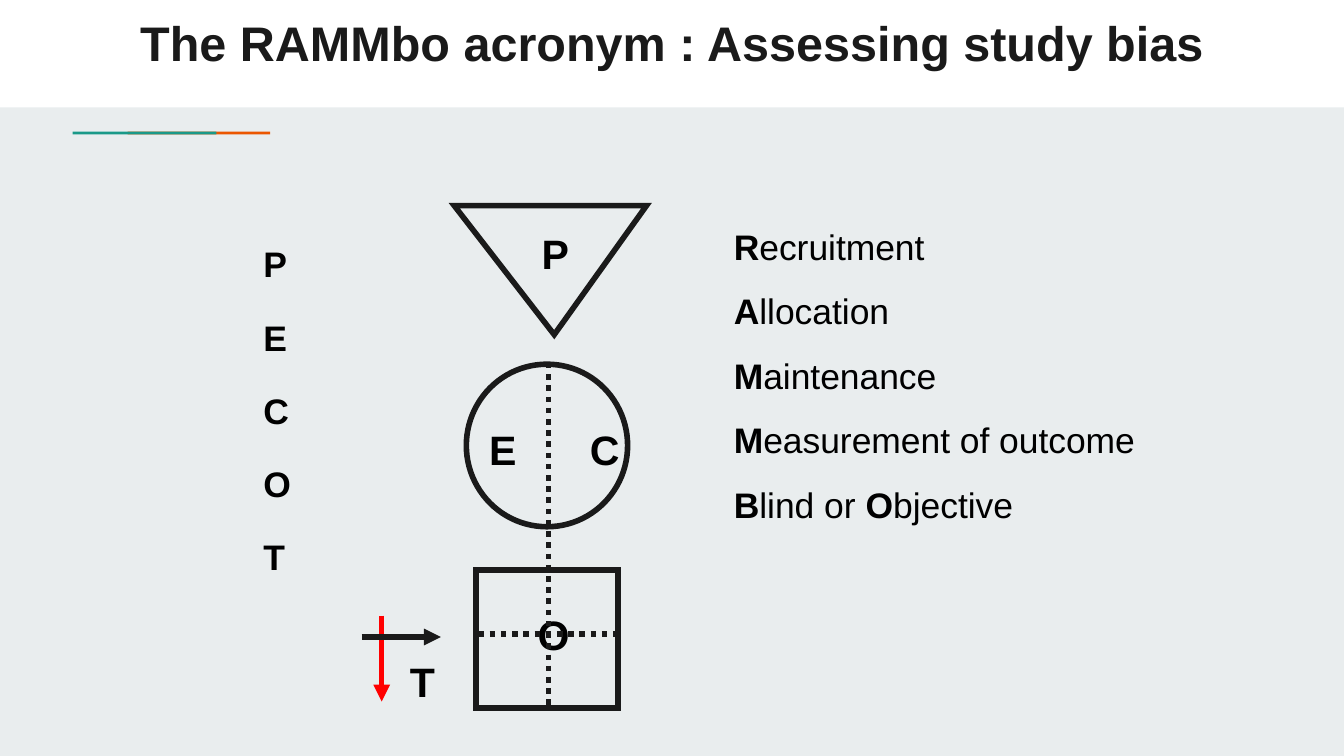
from dataclasses import dataclass

from lxml.etree import SubElement
from pptx import Presentation
from pptx.dml.color import RGBColor
from pptx.enum.dml import MSO_LINE
from pptx.enum.shapes import MSO_CONNECTOR, MSO_SHAPE
from pptx.enum.text import MSO_ANCHOR, MSO_AUTO_SIZE, PP_ALIGN
from pptx.oxml.ns import qn
from pptx.util import Inches, Pt


@dataclass(frozen=True)
class Theme:
    font: str = "Arial"
    back: str = "E9EDEE"
    band: str = "FFFFFF"
    ink: str = "1A1A1A"
    text: str = "000000"
    teal: str = "1A9988"
    orange: str = "EB5600"
    red: str = "FF0000"
    title: int = 26
    label: int = 22
    body: int = 19
    line: int = 3


THEME = Theme()


def color(code):
    return RGBColor.from_string(code)


def add_run(para, text, size, code=THEME.text, bold=True):
    run = para.add_run()
    run.text = text
    font = run.font
    font.name, font.size, font.bold = THEME.font, Pt(size), bold
    font.color.rgb = color(code)


def set_frame(frame, side, edge, anchor):
    frame.word_wrap = True
    frame.auto_size = MSO_AUTO_SIZE.NONE
    frame.vertical_anchor = anchor
    frame.margin_left = frame.margin_right = Inches(side)
    frame.margin_top = frame.margin_bottom = Inches(edge)


def add_text(slide, box, anchor=MSO_ANCHOR.TOP):
    frame = slide.shapes.add_textbox(*map(Inches, box)).text_frame
    set_frame(frame, 0.08, 0.04, anchor)
    return frame


def add_label(slide, letter, left, top):
    frame = add_text(slide, (left, top, 0.38, 0.56), MSO_ANCHOR.MIDDLE)
    add_run(frame.paragraphs[0], letter, THEME.label)


def add_bar(slide, box, code):
    bar = slide.shapes.add_shape(MSO_SHAPE.RECTANGLE, *map(Inches, box))
    bar.shadow.inherit = False
    bar.fill.solid()
    bar.fill.fore_color.rgb = color(code)
    bar.line.fill.background()


def add_outline(slide, kind, box):
    shape = slide.shapes.add_shape(kind, *map(Inches, box))
    shape.shadow.inherit = False
    shape.fill.background()
    shape.line.color.rgb = color(THEME.ink)
    shape.line.width = Pt(THEME.line)
    edge = shape._element.spPr.get_or_add_ln()
    SubElement(edge, qn("a:miter"), lim="800000")
    return shape


def add_line(slide, start, end, code=THEME.ink, dotted=False, arrow=False):
    line = slide.shapes.add_connector(
        MSO_CONNECTOR.STRAIGHT, *map(Inches, start + end))
    line.line.color.rgb = color(code)
    line.line.width = Pt(THEME.line)
    props = line._element.spPr
    if dotted:
        line.line.dash_style = MSO_LINE.ROUND_DOT
    if arrow:
        SubElement(props.get_or_add_ln(), qn("a:tailEnd"), type="triangle")
    SubElement(props, qn("a:effectLst"))


def add_header(slide, width, height):
    add_bar(slide, (0, 0, width, height), THEME.band)
    add_bar(slide, (0.95, height + 0.18, 1.06, 0.02), THEME.orange)
    add_bar(slide, (0.54, height + 0.18, 1.07, 0.02), THEME.teal)
    title = slide.shapes.title
    title.left, title.top, title.width, title.height = map(
        Inches, (0.8, 0, 8.41, 0.9))
    # Bring the title in front of its band.
    slide.shapes._spTree.append(title._element)
    set_frame(title.text_frame, 0.1, 0.1, MSO_ANCHOR.TOP)
    para = title.text_frame.paragraphs[0]
    para.alignment = PP_ALIGN.CENTER
    add_run(para, "The RAMMbo acronym : Assessing study bias",
            THEME.title, THEME.ink)
    para.add_line_break()


def add_list(slide, box, rows, spacing, indent=0):
    """Each row alternates bold and plain pieces, starting with bold."""
    frame = add_text(slide, box)
    for i, row in enumerate(rows):
        para = frame.add_paragraph() if i else frame.paragraphs[0]
        para.line_spacing = spacing
        para.space_before = Pt(THEME.body / 2)
        if indent:
            props = para._p.get_or_add_pPr()
            props.set("marL", str(Inches(indent)))
            props.set("indent", str(-Inches(indent)))
        for j, piece in enumerate(row):
            add_run(para, piece, THEME.body, bold=j % 2 == 0)


def add_figure(slide, left, top):
    """Triangle, circle and square, with the time arrows at lower left."""
    for letter, x, y in (("P", 1.26, 0.07), ("E", 0.87, 1.53),
                         ("C", 1.62, 1.53), ("O", 1.23, 2.91),
                         ("T", 0.28, 3.26)):
        add_label(slide, letter, left + x, top + y)

    add_line(slide, (left + 0.15, top + 3.05), (left + 0.15, top + 3.69),
             THEME.red, arrow=True)
    add_outline(slide, MSO_SHAPE.OVAL, (left + 0.78, top + 1.18, 1.2, 1.21))
    add_outline(slide, MSO_SHAPE.RECTANGLE,
                (left + 0.85, top + 2.71, 1.06, 1.03))
    add_line(slide, (left + 1.39, top + 1.17), (left + 1.39, top + 3.73),
             dotted=True)
    people = add_outline(slide, MSO_SHAPE.ISOSCELES_TRIANGLE,
                         (left + 0.69, top, 1.43, 0.96))
    people.rotation = 180
    people.adjustments[0] = 0.48
    add_line(slide, (left + 0.87, top + 3.19), (left + 1.91, top + 3.19),
             dotted=True)
    add_line(slide, (left, top + 3.21), (left + 0.59, top + 3.21), arrow=True)


def main():
    deck = Presentation()
    deck.slide_width = Inches(10)
    deck.slide_height = deck.slide_width * 9 // 16
    slide = deck.slides.add_slide(deck.slide_layouts[5])
    slide.background.fill.solid()
    slide.background.fill.fore_color.rgb = color(THEME.back)

    add_header(slide, 10, 0.8)
    add_figure(slide, 2.69, 1.53)
    add_list(slide, (1.88, 1.67, 0.55, 2.8), "PECOT", 1.3)
    add_list(slide, (5.38, 1.6, 3.25, 2.48), (
        ("R", "ecruitment"),
        ("A", "llocation"),
        ("M", "aintenance"),
        ("M", "easurement of outcome"),
        ("B", "lind or ", "O", "bjective"),
    ), 1.1, indent=0.25)
    deck.save("out.pptx")


if __name__ == "__main__":
    main()
